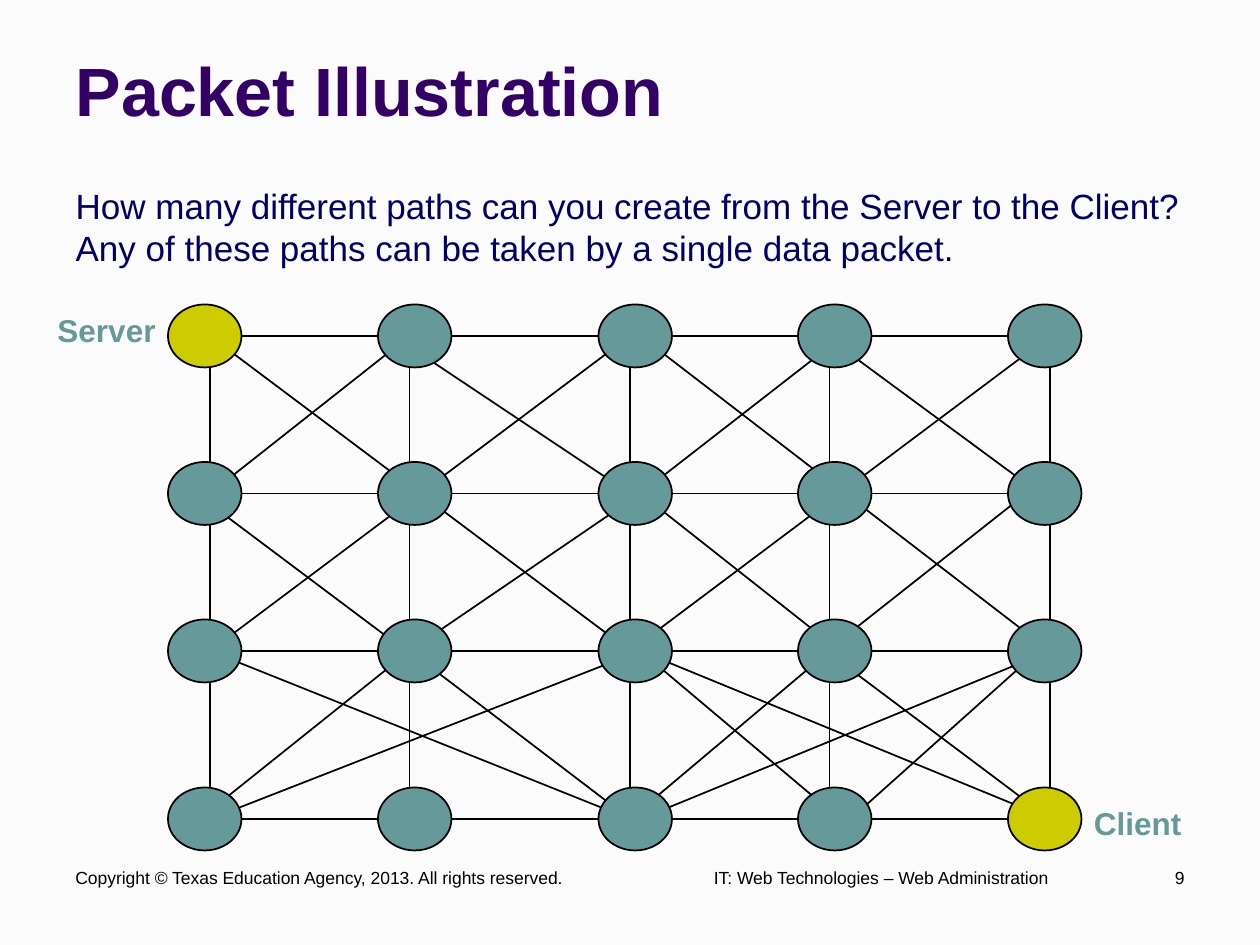
import pptx
import pptx.util
import pptx.dml.color
import pptx.enum.shapes
import pptx.enum.text
import pptx.oxml.ns
import lxml.etree

COLORS = {"back": "FBFBFB", "title": "330066", "body": "000066",
          "node": "669999", "end": "CCCC00", "black": "000000"}
FONT = "Arial"
UNITS_PER_INCH = 12

TITLE = "Packet Illustration"
QUESTION = ("How many different paths can you create from the Server to the Client? "
            "Any of these paths can be taken by a single data packet.")

LEFT, RIGHT = pptx.enum.text.PP_ALIGN.LEFT, pptx.enum.text.PP_ALIGN.RIGHT
LABELS = [
    ("Server", (2, 29, 14, 4.8), RIGHT, 18, "node", True),
    ("Client", (103, 76, 11, 4.8), LEFT, 18, "node", True),
    ("Copyright © Texas Education Agency, 2013. All rights reserved.",
     (6, 82, 67, 6), LEFT, 10, "black", False),
    ("IT: Web Technologies – Web Administration", (41, 82, 60, 6), RIGHT, 10, "black", False),
    ("9", (86, 82, 28, 6), RIGHT, 10, "black", False),
]

NODE_W, NODE_H = 7, 6
NODE_COLS = [16, 36, 57, 76, 96]
NODE_ROWS = [29, 44, 59, 75]
ENDS = [(16, 29), (96, 75)]
LINE_COLS = [20, 39, 60, 79, 100]
LINE_ROWS = [32, 47, 62, 78]
DIAGONALS = [
    (20, 32, 60, 62), (20, 62, 60, 32), (20, 62, 60, 78), (20, 78, 61, 62),
    (61, 32, 100, 62), (60, 62, 100, 32), (61, 62, 100, 78), (61, 78, 100, 62),
    (80, 33, 99, 47), (79, 33, 61, 47), (39, 33, 60, 47), (39, 32, 20, 47),
    (20, 48, 40, 63), (39, 62, 61, 47), (39, 62, 60, 78), (60, 78, 79, 62),
    (61, 62, 80, 78), (81, 78, 100, 61), (80, 61, 99, 46), (61, 47, 80, 62),
    (39, 62, 19, 78), (80, 63, 100, 78),
]


def units(*values):
    return [pptx.util.Inches(v / UNITS_PER_INCH) for v in values]


def rgb(name):
    return pptx.dml.color.RGBColor.from_string(COLORS[name])


def place(shape, box):
    shape.left, shape.top, shape.width, shape.height = units(*box)


def write(shape, text, size, color, bold=False, align=LEFT):
    tf = shape.text_frame
    tf.word_wrap = True
    tf.auto_size = pptx.enum.text.MSO_AUTO_SIZE.NONE
    tf.text = text
    p = tf.paragraphs[0]
    p.alignment = align
    p.space_before = pptx.util.Pt(0)
    p.font.name = FONT
    p.font.size = pptx.util.Pt(size)
    p.font.bold = bold
    p.font.color.rgb = rgb(color)


def outline(shape):
    shape.line.color.rgb = rgb("black")
    shape.line.width = pptx.util.Pt(1)


def add_link(shapes, ends):
    link = shapes.add_connector(pptx.enum.shapes.MSO_CONNECTOR.STRAIGHT, *units(*ends))
    outline(link)
    lxml.etree.SubElement(link._element.spPr, pptx.oxml.ns.qn("a:effectLst"))


def add_node(shapes, x, y):
    node = shapes.add_shape(pptx.enum.shapes.MSO_SHAPE.OVAL, *units(x, y, NODE_W, NODE_H))
    node.shadow.inherit = False
    node.fill.solid()
    node.fill.fore_color.rgb = rgb("end" if (x, y) in ENDS else "node")
    outline(node)


def main():
    prs = pptx.Presentation()
    prs.slide_width, prs.slide_height = units(120, 90)
    s = prs.slides.add_slide(prs.slide_layouts[1])
    s.background.fill.solid()
    s.background.fill.fore_color.rgb = rgb("back")

    title, body = s.shapes.title, s.placeholders[1]
    place(title, (6, 1.6, 82, 11.4))
    write(title, TITLE, 39, "title", bold=True)
    title.text_frame.vertical_anchor = pptx.enum.text.MSO_ANCHOR.BOTTOM

    place(body, (6, 17, 111, 9.2))
    body.text_frame.text = QUESTION
    pPr = body.text_frame.paragraphs[0]._p.get_or_add_pPr()
    write(body, QUESTION, 20, "body")
    pPr = body.text_frame.paragraphs[0]._p.get_or_add_pPr()
    pPr.set("marL", "0")
    pPr.set("indent", "0")
    bullet = lxml.etree.Element(pptx.oxml.ns.qn("a:buNone"))
    pPr.find(pptx.oxml.ns.qn("a:spcBef")).addnext(bullet)

    network = s.shapes.add_group_shape().shapes
    rows = [(LINE_COLS[0], y, LINE_COLS[-1], y) for y in LINE_ROWS]
    rows[1] = (19, 47, 99, 47)
    cols = [(x, LINE_ROWS[0], x, LINE_ROWS[-1]) for x in LINE_COLS]
    for ends in rows + cols + DIAGONALS:
        add_link(network, ends)
    for y in NODE_ROWS:
        for x in NODE_COLS:
            add_node(network, x, y)

    for text, box, align, size, color, bold in LABELS:
        write(s.shapes.add_textbox(*units(*box)), text, size, color, bold, align)

    prs.save("out.pptx")


if __name__ == "__main__":
    main()
